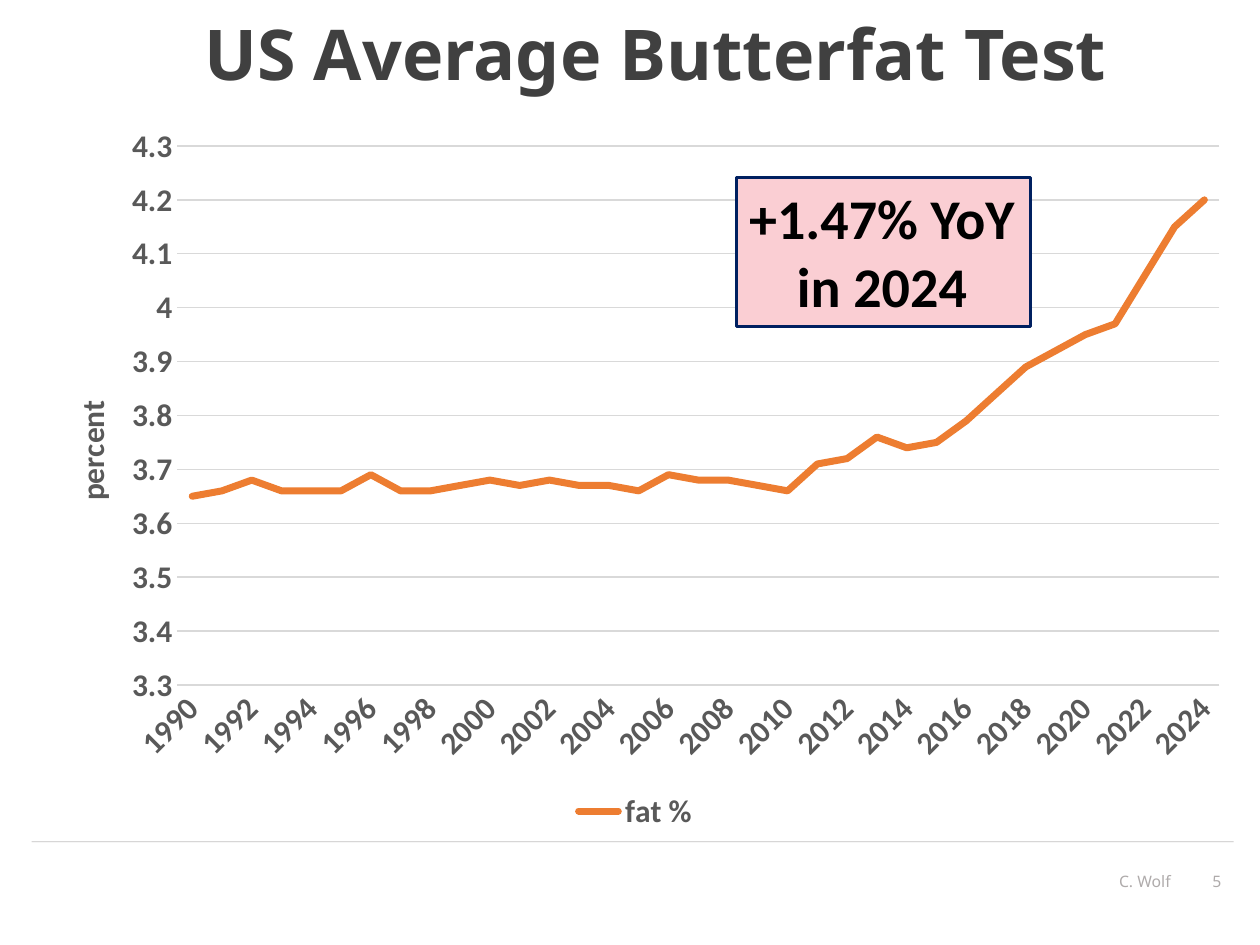
import pptx
import pptx.chart.data
import pptx.dml.color
import pptx.enum.chart
import pptx.enum.shapes
import pptx.enum.text
import pptx.oxml
import pptx.oxml.ns
import pptx.util

Pt = pptx.util.Pt
ALIGN = pptx.enum.text.PP_ALIGN
qn = pptx.oxml.ns.qn


def style_font(font, name, size, color, bold=False):
    font.name, font.size, font.bold = name, Pt(size), bold
    font.color.rgb = pptx.dml.color.RGBColor.from_string(color)


def set_layout(parent, position, index, inner=False):
    """Give a chart part a manual layout, in fractions of the chart."""
    for old in parent.findall(qn("c:layout")):
        parent.remove(old)
    layout = pptx.oxml.parse_xml(f"<c:layout {pptx.oxml.ns.nsdecls('c')}><c:manualLayout/></c:layout>")
    settings = {"layoutTarget": "inner"} if inner else {}
    settings.update(xMode="edge", yMode="edge", **position)
    for tag, value in settings.items():
        layout[0].makeelement(qn(f"c:{tag}"))
        child = pptx.oxml.parse_xml(f"<c:{tag} {pptx.oxml.ns.nsdecls('c')} val='{value}'/>")
        layout[0].append(child)
    parent.insert(index, layout)


rgb = pptx.dml.color.RGBColor.from_string
deck = pptx.Presentation()
deck.slide_width, deck.slide_height = Pt(720), Pt(540)
page = deck.slides.add_slide(deck.slide_layouts[6])

# Footer rule
rule = page.shapes.add_connector(
    pptx.enum.shapes.MSO_CONNECTOR.STRAIGHT, Pt(18), Pt(481), Pt(705), Pt(481))
rule.line.width = Pt(0.5)
rule.line.color.rgb = rgb("AFABAB")
color_element = rule._element.spPr.find(".//" + qn("a:srgbClr"))
color_element.append(pptx.oxml.parse_xml(f"<a:alpha {pptx.oxml.ns.nsdecls('a')} val='75000'/>"))
rule._element.spPr.append(pptx.oxml.parse_xml(f"<a:effectLst {pptx.oxml.ns.nsdecls('a')}/>"))

# Title, author and page number
texts = [
    ("US Average Butterfat Test", 51, 8, 647, 90, ALIGN.CENTER, 40, "404040", True),
    ("C. Wolf", 313, 494.5, 363, 29, ALIGN.RIGHT, 9, "AFABAB", False),
    ("5", 676, 494.5, 29, 29, ALIGN.RIGHT, 9, "AFABAB", False),
]
for text, left, top, width, height, align, size, color, bold in texts:
    box = page.shapes.add_textbox(Pt(left), Pt(top), Pt(width), Pt(height))
    box.text_frame.word_wrap = True
    para = box.text_frame.paragraphs[0]
    para.text = text
    para.alignment = align
    para.line_spacing = 0.9 if bold else 1.0
    style_font(para.font, "Noto Sans", size, color, bold)

# Butterfat line chart
data = pptx.chart.data.CategoryChartData()
data.categories = [str(year) for year in range(1990, 2025)]
data.add_series("fat %", [
    3.65, 3.66, 3.68, 3.66, 3.66, 3.66, 3.69, 3.66, 3.66, 3.67,
    3.68, 3.67, 3.68, 3.67, 3.67, 3.66, 3.69, 3.68, 3.68, 3.67,
    3.66, 3.71, 3.72, 3.76, 3.74, 3.75, 3.79, 3.84, 3.89, 3.92,
    3.95, 3.97, 4.06, 4.15, 4.2])
chart = page.shapes.add_chart(
    pptx.enum.chart.XL_CHART_TYPE.LINE, Pt(16), Pt(64), Pt(694), Pt(414), data).chart
style_font(chart.font, "Calibri", 18, "595959", True)
chart.has_title = False
chart.has_legend = True
chart.legend.position = pptx.enum.chart.XL_LEGEND_POSITION.BOTTOM
chart.legend.include_in_layout = False
style_font(chart.legend.font, "Calibri", 18, "595959", True)
chart.plots[0].vary_by_categories = False

series = chart.plots[0].series[0]
series.smooth = False
series.marker.style = pptx.enum.chart.XL_MARKER_STYLE.NONE
series.format.line.width = Pt(4)
series.format.line.color.rgb = rgb("ED7D31")
series.format.line._get_or_add_ln().set("cap", "rnd")

# Axes
years, percent = chart.category_axis, chart.value_axis
for axis in (years, percent):
    axis.major_tick_mark = axis.minor_tick_mark = pptx.enum.chart.XL_TICK_MARK.NONE
    style_font(axis.tick_labels.font, "Calibri", 18, "595959", True)
years.tick_labels.offset = 100
years._element.find(qn("c:txPr")).find(qn("a:bodyPr")).set("rot", "-2700000")
years._element.find(qn("c:noMultiLvlLbl")).addprevious(
    pptx.oxml.parse_xml(f"<c:tickLblSkip {pptx.oxml.ns.nsdecls('c')} val='2'/>"))
percent.minimum_scale, percent.maximum_scale, percent.major_unit = 3.3, 4.3, 0.1
percent.tick_labels.number_format = "General"
percent.tick_labels.number_format_is_linked = False
percent.format.line.fill.background()
for line in (years.format.line, percent.major_gridlines.format.line):
    line.width = Pt(0.75)
    line.color.rgb = rgb("D9D9D9")

title_frame = percent.axis_title.text_frame
title_frame.text = "percent"
title_frame._txBody.bodyPr.set("rot", "-5400000")
title_frame._txBody.bodyPr.set("vert", "horz")
style_font(title_frame.paragraphs[0].font, "Calibri", 18, "595959", True)
set_layout(percent.axis_title._element, {"x": 0.03, "y": 0.39}, 1)
set_layout(chart._chartSpace.chart.plotArea,
           {"x": 0.123, "y": 0.047, "w": 0.858, "h": 0.744}, 0, inner=True)

# Callout
callout = page.shapes.add_shape(
    pptx.enum.shapes.MSO_SHAPE.RECTANGLE, Pt(421), Pt(101.5), Pt(168), Pt(85))
callout.shadow.inherit = False
callout.fill.solid()
callout.fill.fore_color.rgb = rgb("FACED3")
callout.line.color.rgb = rgb("002060")
callout.line.width = Pt(1.5)
frame = callout.text_frame
frame.word_wrap = False
frame.auto_size = pptx.enum.text.MSO_AUTO_SIZE.SHAPE_TO_FIT_TEXT
frame.vertical_anchor = pptx.enum.text.MSO_ANCHOR.TOP
frame.text = "+1.47% YoY\nin 2024"
for para, align in zip(frame.paragraphs, (ALIGN.LEFT, ALIGN.CENTER)):
    para.alignment = align
    style_font(para.font, "Calibri", 32, "000000", True)

deck.save("out.pptx")
